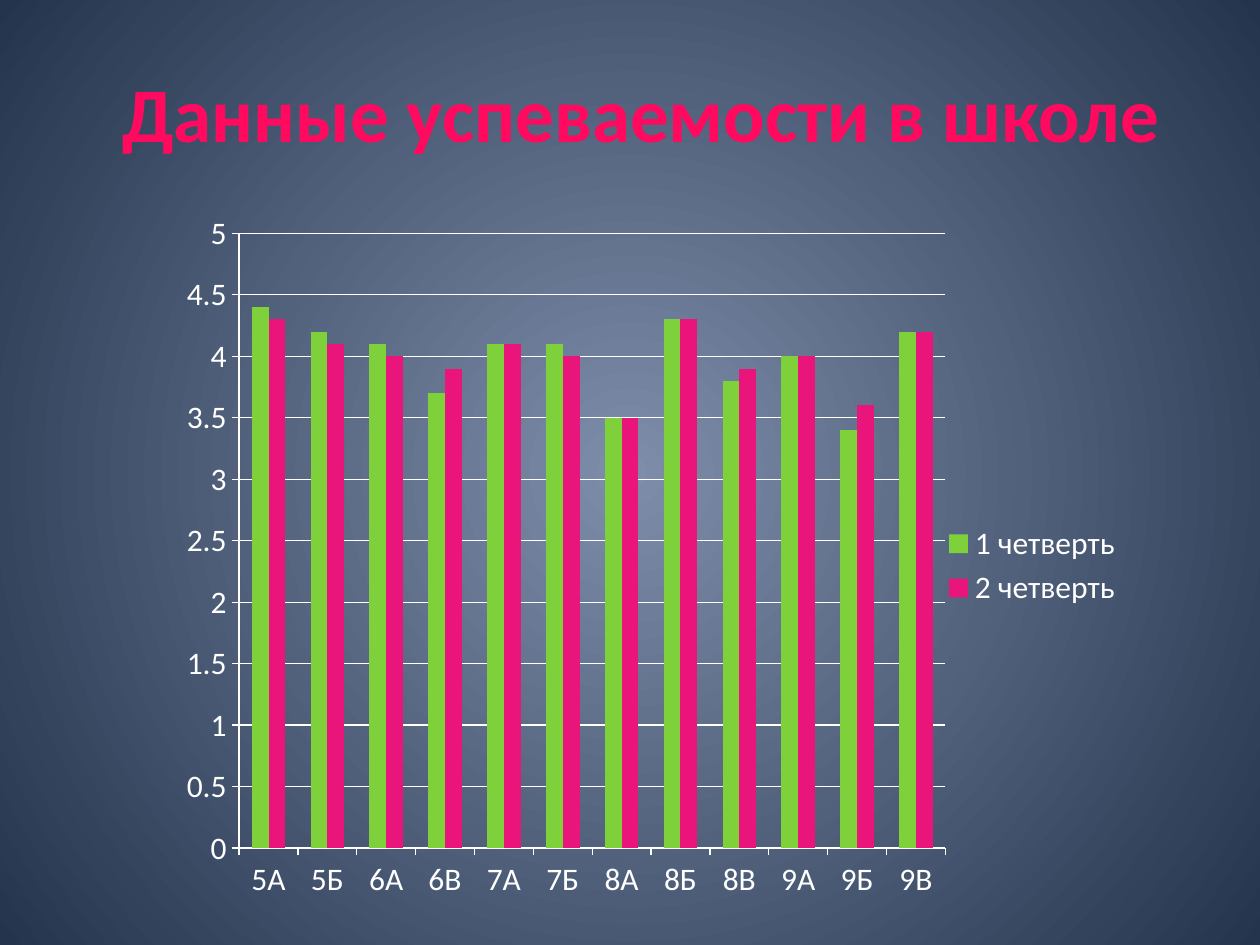
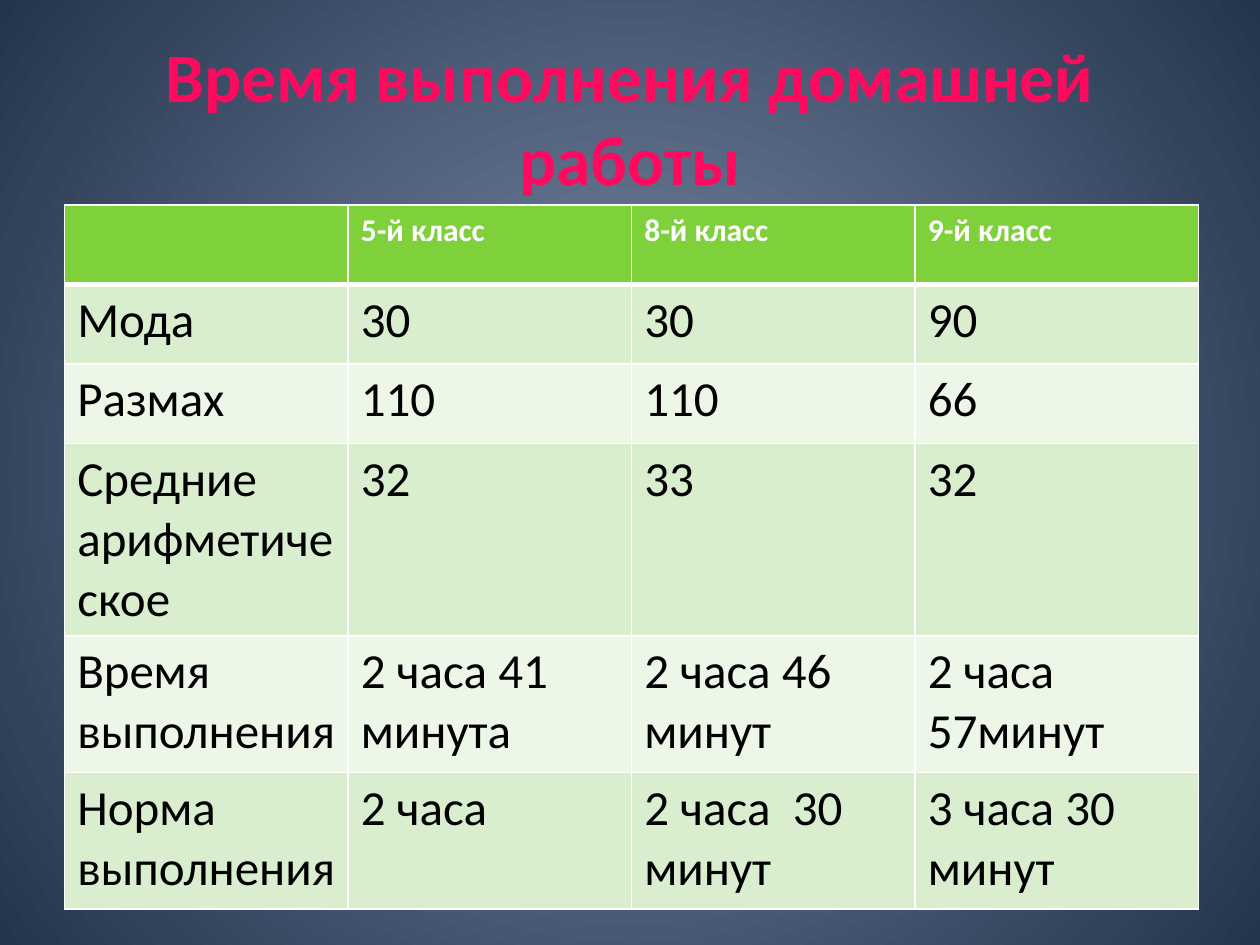
from pptx import Presentation
from pptx.chart.data import CategoryChartData
from pptx.dml.color import RGBColor
from pptx.enum.chart import XL_CHART_TYPE, XL_LEGEND_POSITION, XL_TICK_MARK
from pptx.enum.text import MSO_ANCHOR, MSO_AUTO_SIZE, PP_ALIGN
from pptx.oxml import parse_xml
from pptx.oxml.ns import nsdecls
from pptx.util import Pt

FONT = "Calibri"
WHITE, BLACK, GREEN, PINK = "FFFFFF", "000000", "7FD13B", "EA157A"
BANDS = ["D8EECE", "ECF7E8"]
BACKGROUND_STOPS = [(0, "7D8DAA"), (100, "24344C")]
TITLE_STOPS = [(0, "FF89AA"), (75, "FF0A5E"), (100, "BD0059")]
RADIAL = ('<a:path path="circle">'
          '<a:fillToRect l="50000" t="50000" r="50000" b="50000"/></a:path>')
DOWNWARD = '<a:lin ang="5400000" scaled="0"/>'


def rgb(color):
    return RGBColor.from_string(color)


def set_gradient(fill, owner, stops, direction):
    """Give fill, which lies inside the owner element, any stops and direction."""
    fill.gradient()
    plain = owner.xpath(".//a:gradFill")[0]
    stops_xml = "".join(f'<a:gs pos="{place * 1000}"><a:srgbClr val="{color}"/></a:gs>'
                        for place, color in stops)
    plain.getparent().replace(plain, parse_xml(
        f'<a:gradFill {nsdecls("a")} rotWithShape="1">'
        f'<a:gsLst>{stops_xml}</a:gsLst>{direction}</a:gradFill>'))


prs = Presentation()
prs.slide_width, prs.slide_height = Pt(720), Pt(540)
master = prs.slide_master
set_gradient(master.background.fill, master.element.cSld, BACKGROUND_STOPS, RADIAL)

# Slides and their titles: text, size, left, top, width, height, top inset
titles = [
    ("Данные успеваемости в школе", 44, 42.5, -19.5, 648, 113, 57.5),
    ("Время выполнения домашней работы", 39.6, 36, 21.6, 648, 90, 3.6),
]
slides = []
for text, size, left, top, width, height, inset in titles:
    slide = prs.slides.add_slide(prs.slide_layouts[5])
    slides.append(slide)
    title = slide.shapes.title
    box = {"left": left, "top": top, "width": width, "height": height}
    for name, value in box.items():
        setattr(title, name, Pt(value))
    frame = title.text_frame
    frame.text = text
    frame_format = {"word_wrap": True, "auto_size": MSO_AUTO_SIZE.NONE,
                    "vertical_anchor": MSO_ANCHOR.MIDDLE, "margin_top": Pt(inset)}
    for name, value in frame_format.items():
        setattr(frame, name, value)
    heading = frame.paragraphs[0]
    heading.alignment = PP_ALIGN.CENTER
    font = heading.runs[0].font
    for name, value in {"name": FONT, "size": Pt(size), "bold": True}.items():
        setattr(font, name, value)
    set_gradient(font.fill, heading.runs[0]._r, TITLE_STOPS, DOWNWARD)

grades_slide, homework_slide = slides

# Average grades by class
grades = CategoryChartData()
grades.categories = ["5А", "5Б", "6А", "6В", "7А", "7Б",
                     "8А", "8Б", "8В", "9А", "9Б", "9В"]
quarters = [
    ("1 четверть", GREEN, [4.4, 4.2, 4.1, 3.7, 4.1, 4.1, 3.5, 4.3, 3.8, 4, 3.4, 4.2]),
    ("2 четверть", PINK, [4.3, 4.1, 4, 3.9, 4.1, 4, 3.5, 4.3, 3.9, 4, 3.6, 4.2]),
]
for quarter, _, averages in quarters:
    grades.add_series(quarter, averages)
chart = grades_slide.shapes.add_chart(
    XL_CHART_TYPE.COLUMN_CLUSTERED, Pt(76.5), Pt(122.5), Pt(572.5), Pt(400), grades).chart
chart.has_title = False
chart.font.name, chart.font.size = FONT, Pt(18)
chart.font.color.rgb = rgb(WHITE)
chart.has_legend = True
chart.legend.position = XL_LEGEND_POSITION.RIGHT
chart.legend.include_in_layout = False

plot = chart.plots[0]
for name, value in {"gap_width": 150, "overlap": 0, "vary_by_categories": False}.items():
    setattr(plot, name, value)
for series, (_, color, _) in zip(plot.series, quarters):
    series.format.fill.solid()
    series.format.fill.fore_color.rgb = rgb(color)

grade_axis = chart.value_axis
scale = {"minimum_scale": 0, "maximum_scale": 5, "major_unit": 0.5,
         "has_major_gridlines": True}
for name, value in scale.items():
    setattr(grade_axis, name, value)
for axis in (chart.category_axis, grade_axis):
    axis.major_tick_mark = XL_TICK_MARK.CROSS if axis is None else XL_TICK_MARK.OUTSIDE
for part in (chart.category_axis, grade_axis, grade_axis.major_gridlines):
    part.format.line.color.rgb = rgb(WHITE)
    part.format.line.width = Pt(0.75)

plot_area = chart._chartSpace.chart.plotArea
for automatic in plot_area.xpath("c:layout"):
    plot_area.remove(automatic)
plot_area.insert(0, parse_xml(
    f'<c:layout {nsdecls("c")}><c:manualLayout><c:layoutTarget val="inner"/>'
    '<c:xMode val="edge"/><c:yMode val="edge"/><c:x val="0.105"/><c:y val="0.023"/>'
    '<c:w val="0.705"/><c:h val="0.882"/></c:manualLayout></c:layout>'))

# Homework time by class
homework = [
    ["", "5-й класс", "8-й класс", "9-й класс"],
    ["Мода", "30", "30", "90"],
    ["Размах", "110", "110", "66"],
    ["Средние арифметическое", "32", "33", "32"],
    ["Время выполнения", "2 часа 41 минута", "2 часа 46 минут", "2 часа 57минут"],
    ["Норма выполнения", "2 часа", "2 часа  30 минут", "3 часа 30 минут"],
]
row_heights = [45.5, 45.5, 45.5, 104.5, 78, 78]
table = homework_slide.shapes.add_table(
    len(homework), len(homework[0]), Pt(37), Pt(117), Pt(648), Pt(sum(row_heights))).table
for column in table.columns:
    column.width = Pt(162)
for index, (row, height, texts) in enumerate(zip(table.rows, row_heights, homework)):
    row.height = Pt(height)
    header = index == 0
    background = GREEN if header else BANDS[(index - 1) % 2]
    edges = {"lnL": 1, "lnR": 1, "lnT": 3 if index == 1 else 1, "lnB": 3 if header else 1}
    for cell, text in zip(row.cells, texts):
        cell.fill.solid()
        cell.fill.fore_color.rgb = rgb(background)
        for position, (edge, weight) in enumerate(edges.items()):
            cell._tc.tcPr.insert(position, parse_xml(
                f'<a:{edge} {nsdecls("a")} w="{Pt(weight)}"><a:solidFill>'
                f'<a:srgbClr val="{WHITE}"/></a:solidFill></a:{edge}>'))
        if text:
            cell.text = text
            font = cell.text_frame.paragraphs[0].runs[0].font
            text_format = {"name": FONT, "size": Pt(18 if header else 28), "bold": header}
            for name, value in text_format.items():
                setattr(font, name, value)
            font.color.rgb = rgb(WHITE if header else BLACK)

prs.save("out.pptx")
